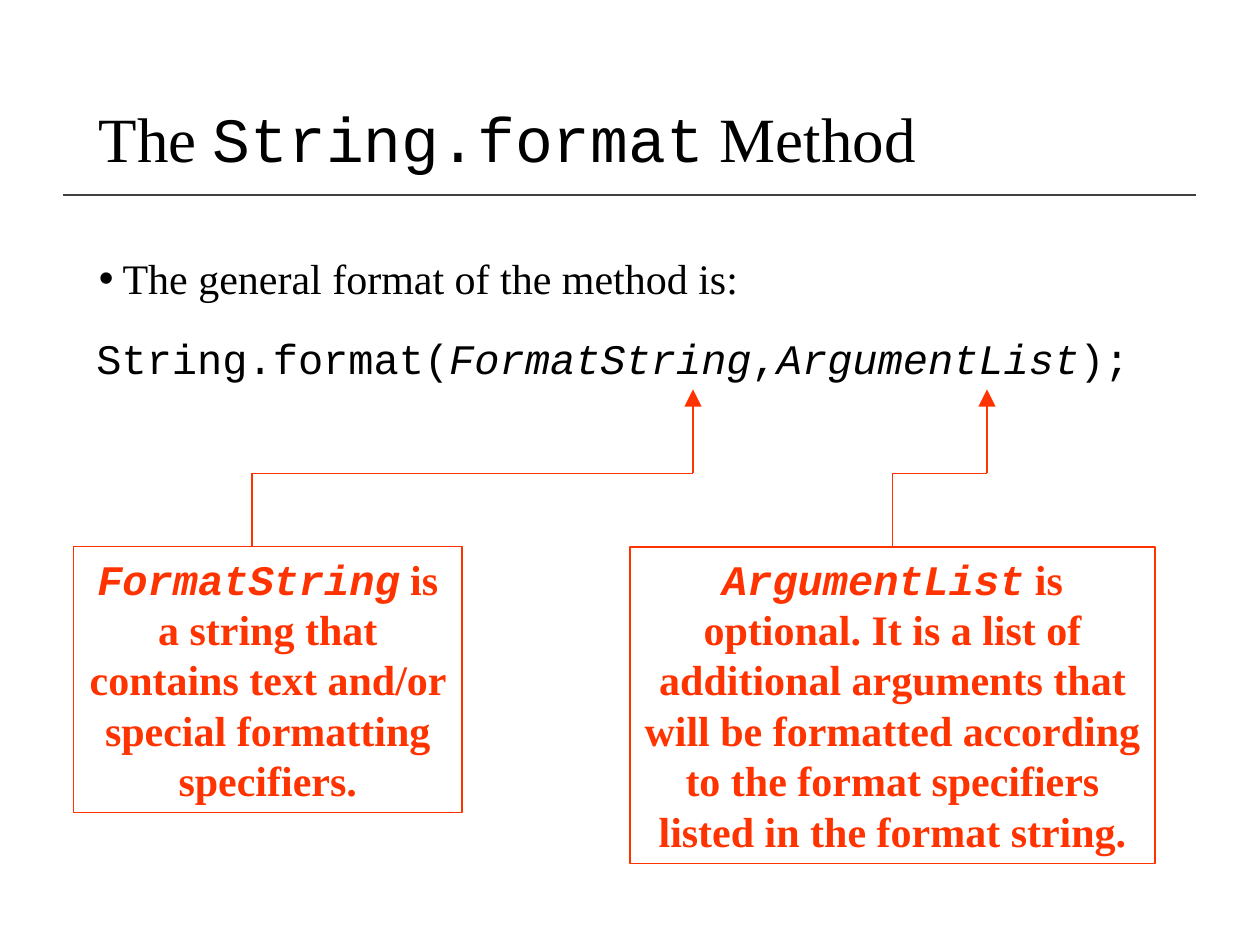
"""Build a slide that explains the general form of String.format."""
from lxml import etree
from pptx import Presentation
from pptx.dml.color import RGBColor
from pptx.enum import shapes, text
from pptx.oxml.ns import qn
from pptx.util import Pt

SERIF, MONO = "Times New Roman", "Courier New"
BLACK, GRAY, ORANGE = "000000", "404040", "FF3300"


def write(shape, runs, size, color):
    shape.text_frame.word_wrap = True
    paragraph = shape.text_frame.paragraphs[0]
    paragraph.font.size = Pt(size)
    paragraph.font.color.rgb = RGBColor.from_string(color)
    for words, font_name, italic in runs:
        run = paragraph.add_run()
        run.text = words
        run.font.name = font_name
        run.font.italic = italic
    return paragraph


def draw_line(start, end, color, width):
    line = slide.shapes.add_connector(
        shapes.MSO_CONNECTOR.STRAIGHT, *(Pt(value) for value in start + end))
    line.line.color.rgb = RGBColor.from_string(color)
    line.line.width = Pt(width)
    properties = line.line._get_or_add_ln()
    etree.SubElement(properties.getparent(), qn("a:effectLst"))
    return properties


presentation = Presentation()
presentation.slide_width, presentation.slide_height = Pt(720), Pt(540)
slide = presentation.slides.add_slide(presentation.slide_layouts[6])

draw_line((36, 111.5), (683.5, 111.5), GRAY, 1)

title = slide.shapes.add_textbox(Pt(49.5), Pt(28.8), Pt(621), Pt(104.4))
title.text_frame.vertical_anchor = text.MSO_ANCHOR.MIDDLE
paragraph = write(title, [("The ", SERIF, False), ("String.format", MONO, False),
                          (" Method", SERIF, False)], 36, BLACK)
paragraph.line_spacing = 0.9

body = slide.shapes.add_textbox(Pt(49.5), Pt(144), Pt(621), Pt(342.7))
paragraph = write(body, [("The general format of the method is:", SERIF, False)], 24, BLACK)
paragraph.line_spacing = 0.9
paragraph.space_before = Pt(7.5)
properties = paragraph._p.get_or_add_pPr()
properties.set("marL", str(Pt(13.5)))
properties.set("indent", str(-Pt(13.5)))
etree.SubElement(properties, qn("a:buFont"), typeface="Arial")
etree.SubElement(properties, qn("a:buChar"), char="•")

syntax = slide.shapes.add_textbox(Pt(48), Pt(186.5), Pt(612), Pt(71.3))
paragraph = write(syntax, [("String.format(", MONO, False), ("FormatString", MONO, True),
                           (",", MONO, False), ("ArgumentList", MONO, True),
                           (");", MONO, False)], 24, BLACK)
paragraph.space_before = paragraph.space_after = Pt(4.8)

BOX_TOP, ELBOW, ARROW_TIP = 312.5, 270.5, 222.5
callouts = [
    (42, 222, 152, 144, 396, "FormatString",
     " is a string that contains text and/or special formatting specifiers."),
    (360, 300, 181, 510, 564, "ArgumentList",
     " is optional. It is a list of additional arguments that will be formatted "
     "according to the format specifiers listed in the format string."),
]
for left, width, height, stem, target, term, meaning in callouts:
    box = slide.shapes.add_shape(shapes.MSO_SHAPE.RECTANGLE,
                                 Pt(left), Pt(BOX_TOP), Pt(width), Pt(height))
    box.shadow.inherit = False
    box.fill.background()
    box.line.color.rgb = RGBColor.from_string(ORANGE)
    box.line.width = Pt(0.75)
    box.text_frame.vertical_anchor = text.MSO_ANCHOR.TOP
    paragraph = write(box, [(term, MONO, True), (meaning, SERIF, False)], 24, ORANGE)
    paragraph.alignment = text.PP_ALIGN.CENTER
    paragraph.font.bold = True

    corners = [(stem, BOX_TOP), (stem, ELBOW), (target, ELBOW), (target, ARROW_TIP)]
    for start, end in zip(corners, corners[1:]):
        properties = draw_line(start, end, ORANGE, 0.75)
    etree.SubElement(properties, qn("a:tailEnd"), type="triangle", w="lg", len="lg")

presentation.save("out.pptx")
